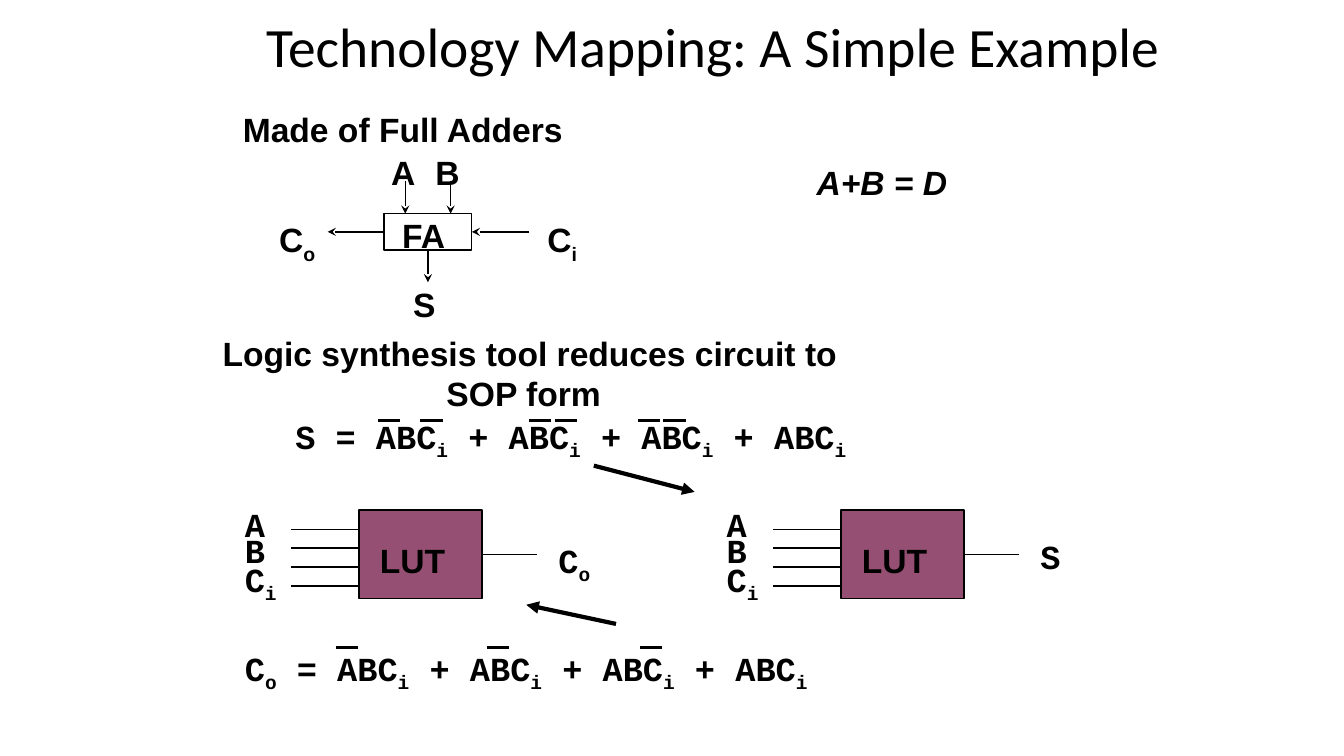
import pptx
import pptx.util
import pptx.dml.color
import pptx.enum.shapes
import pptx.enum.text
import pptx.oxml.ns
from lxml import etree

BLACK, WHITE, PLUM = "000000", "FFFFFF", "954F72"
SANS, MONO = "Arial", "Courier New"
TIGHT = 0.9

# Text: "_" lowers the next letter to a subscript.
TITLE = ("Technology Mapping: A Simple Example", 2.54, 0.33, 9.35, 0.33)
HEADINGS = [
    ("Made of Full Adders", 2.31, 1.03, 3.4, False),
    ("A+B = D", 8, 1.56, 1.51, True),
]
SYNTHESIS_LINES = ["Logic synthesis tool reduces circuit to", "SOP form"]
SYNTHESIS_INDENT = 2.22

ADDER_BOX = (3.81, 2.12, 0.87, 0.36)
ADDER_LABELS = [
    ("FA", 3.89, 2.13, 0.63), ("A", 3.78, 1.5, 0.45), ("B", 4.22, 1.5, 0.45),
    ("C_o", 2.67, 2.13, 0.58), ("C_i", 5.33, 2.13, 0.51), ("S", 4, 2.81, 0.43),
]
ADDER_INPUT_COLUMNS = [4.02, 4.47]

# Formula, left, top, width, height of overbars, left ends of overbars
FORMULAS = [
    ("C_o = ABC_i + ABC_i + ABC_i + ABC_i", 2.33, 6.38, 5.92,
     6.42, [3.33, 4.83, 6.35]),
    ("S = ABC_i + ABC_i + ABC_i + ABC_i", 2.83, 4.08, 5.78,
     4.17, [3.75, 4.17, 5.25, 5.5, 6.33, 6.58]),
]
OVERBAR_WIDTH = 0.22

# Left edge of the table block, output name, output width
LOOKUP_TABLES = [(2.33, "C_o", 0.54), (7.11, "S", 0.4)]
LOOKUP_INPUTS = [("A", 0.4, 5), ("B", 0.4, 5.25), ("C_i", 0.54, 5.5)]
LOOKUP_TOP, LOOKUP_WIDTH, LOOKUP_HEIGHT = 5.06, 1.22, 0.88
WIRE_COUNT, WIRE_TOP, WIRE_STEP = 4, 5.25, 0.1875

FLOW_ARROWS = [((6.11, 6.19), (5.22, 6)), ((5.89, 4.62), (6.89, 4.88))]

TOP, LEFT, BOTTOM, RIGHT = range(4)

presentation = pptx.Presentation()
presentation.slide_width = pptx.util.Inches(13.33)
presentation.slide_height = pptx.util.Inches(7.5)
slide = presentation.slides.add_slide(presentation.slide_layouts[6])


def inches(*lengths):
    return [pptx.util.Inches(length) for length in lengths]


def color(hex_string):
    return pptx.dml.color.RGBColor.from_string(hex_string)


def add_text(lines, left, top, width, height, font=SANS, size=24, bold=True,
             italic=False, spacing=TIGHT, indents=(0,)):
    """Add one paragraph per line, turning "_x" into a subscript x."""
    shape = slide.shapes.add_textbox(*inches(left, top, width, height))
    frame = shape.text_frame
    frame.word_wrap = False
    frame.vertical_anchor = pptx.enum.text.MSO_ANCHOR.TOP
    for index, (line, indent) in enumerate(zip(lines, indents)):
        paragraph = frame.add_paragraph() if index else frame.paragraphs[0]
        paragraph.line_spacing = spacing
        paragraph.font.name, paragraph.font.size = font, pptx.util.Pt(size)
        paragraph.font.bold, paragraph.font.italic = bold, italic
        paragraph.font.color.rgb = color(BLACK)
        if indent:
            properties = paragraph._p.get_or_add_pPr()
            properties.set("marL", str(pptx.util.Inches(indent)))
        normal, *lowered = line.split("_")
        paragraph.add_run().text = normal
        for piece in lowered:
            subscript = paragraph.add_run()
            subscript.text = piece[0]
            subscript._r.get_or_add_rPr().set("baseline", "-25000")
            if piece[1:]:
                paragraph.add_run().text = piece[1:]
    return shape


def add_box(left, top, width, height, fill):
    box = slide.shapes.add_shape(pptx.enum.shapes.MSO_SHAPE.RECTANGLE,
                                 *inches(left, top, width, height))
    box.shadow.inherit = False
    box.fill.solid()
    box.fill.fore_color.rgb = color(fill)
    box.line.color.rgb = color(BLACK)
    box.line.width = pptx.util.Pt(1)
    return box


def add_line(start, end, weight=1, arrowhead=None):
    line = slide.shapes.add_connector(
        pptx.enum.shapes.MSO_CONNECTOR.STRAIGHT, *inches(*start, *end))
    line.line.color.rgb = color(BLACK)
    line.line.width = pptx.util.Pt(weight)
    name = pptx.oxml.ns.qn
    if arrowhead:
        outline = line.line._get_or_add_ln()
        etree.SubElement(outline, name("a:tailEnd"), type=arrowhead)
    etree.SubElement(line._element.spPr, name("a:effectLst"))
    return line


def add_adder():
    left, top, width, height = ADDER_BOX
    right, bottom = left + width, top + height
    center, middle = left + width / 2, top + height / 2
    box = add_box(*ADDER_BOX, WHITE)
    for label, label_left, label_top, label_width in ADDER_LABELS:
        add_text([label], label_left, label_top, label_width, 0.46)
    for column in ADDER_INPUT_COLUMNS:
        add_line((column, 1.8), (column, top), arrowhead="stealth")
    carry_in = add_line((5.25, middle), (right, middle), arrowhead="stealth")
    carry_in.end_connect(box, RIGHT)
    carry_out = add_line((left, middle), (3.25, middle), arrowhead="stealth")
    carry_out.begin_connect(box, LEFT)
    total = add_line((center, bottom), (center, 2.8), arrowhead="stealth")
    total.begin_connect(box, BOTTOM)


def add_lookup_table(left, output, output_width):
    box_left = left + 1.23
    box_right = box_left + LOOKUP_WIDTH
    middle = LOOKUP_TOP + LOOKUP_HEIGHT / 2
    box = add_box(box_left, LOOKUP_TOP, LOOKUP_WIDTH, LOOKUP_HEIGHT, PLUM)
    for wire in range(WIRE_COUNT):
        row = WIRE_TOP + wire * WIRE_STEP
        add_line((left + 0.56, row), (box_left, row))
    output_wire = add_line((box_right, middle), (box_right + 0.55, middle))
    output_wire.begin_connect(box, RIGHT)
    add_text(["LUT"], box_left + 0.11, 5.31, 0.85, 0.5, spacing=1.0)
    add_text([output], box_right + 0.66, 5.31, output_width, 0.47, MONO)
    for label, width, top in LOOKUP_INPUTS:
        add_text([label], left, top, width, 0.47, MONO)


def main():
    text, *place = TITLE
    title = add_text([text], *place, font="Calibri", size=39.6, bold=False)
    title.text_frame.vertical_anchor = pptx.enum.text.MSO_ANCHOR.MIDDLE
    title.text_frame.word_wrap = True
    add_adder()
    for heading, left, top, width, italic in HEADINGS:
        add_text([heading], left, top, width, 0.5, italic=italic, spacing=1.0)
    add_text(SYNTHESIS_LINES, 2.11, 3.25, 6.35, 0.91, spacing=1.0,
             indents=(0, SYNTHESIS_INDENT))
    for formula, left, top, width, bar_row, bar_lefts in FORMULAS:
        add_text([formula], left, top, width, 0.47, MONO)
        for bar_left in bar_lefts:
            add_line((bar_left, bar_row), (bar_left + OVERBAR_WIDTH, bar_row), 2)
    for lookup_table in LOOKUP_TABLES:
        add_lookup_table(*lookup_table)
    for start, end in FLOW_ARROWS:
        add_line(start, end, 3, "triangle")
    presentation.save("out.pptx")


if __name__ == "__main__":
    main()
